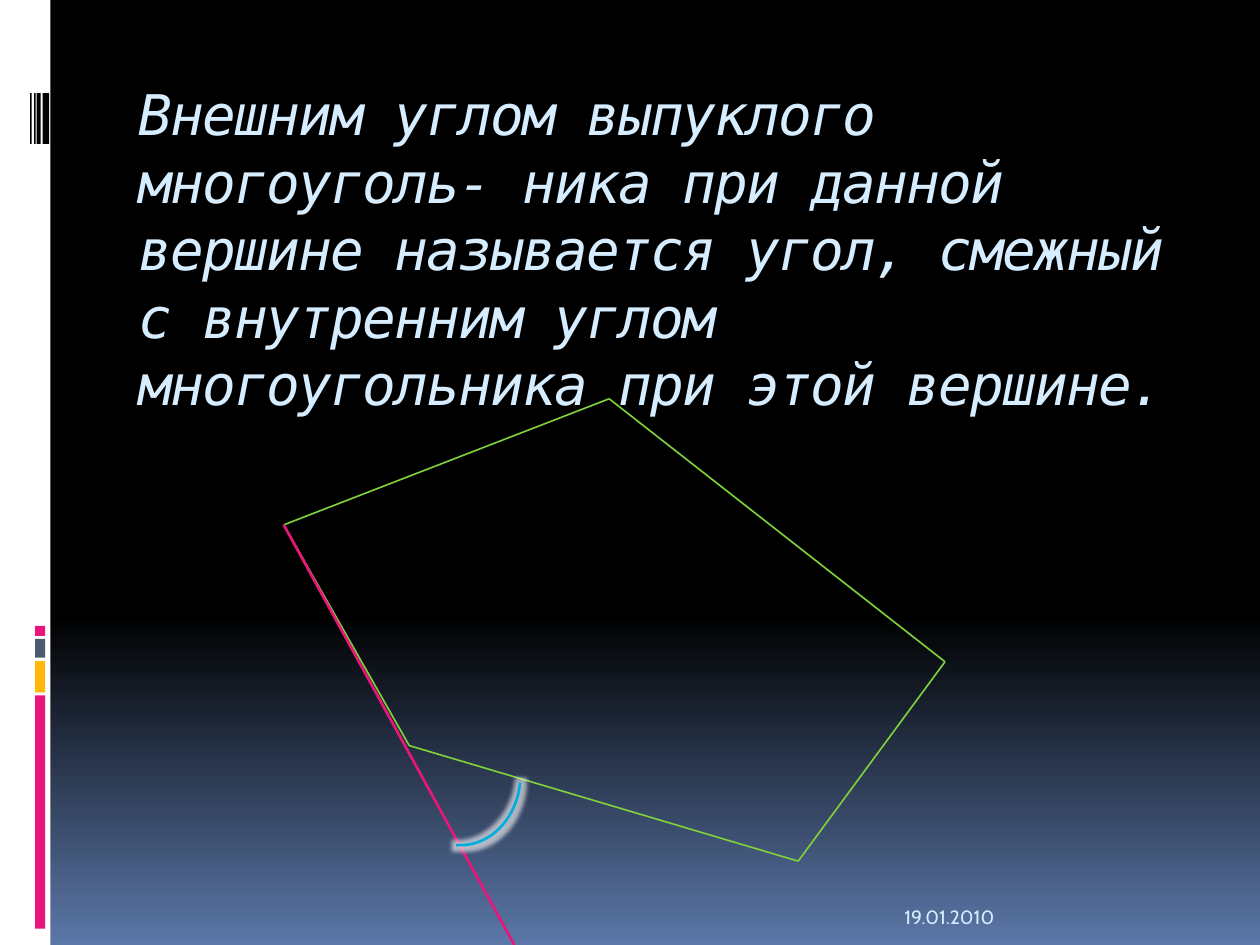
from lxml import etree
from pptx import Presentation
from pptx.dml.color import RGBColor
from pptx.enum import shapes, text
from pptx.oxml import ns
from pptx.util import Cm, Pt

COLORS = {
    "black": "000000", "white": "FFFFFF", "sky": "5B77A8", "pink": "EA157A",
    "amber": "FEB80A", "slate": "4E5B6F", "pale": "D6ECFF",
    "green": "7FD13B", "blue": "00ADDC",
}
A = ns.qn("a:effectLst")


def add_line(page, start, end, color, width):
    line = page.shapes.add_connector(
        shapes.MSO_CONNECTOR.STRAIGHT, *[Cm(v) for v in start + end])
    line.line.color.rgb = RGBColor.from_string(COLORS[color])
    line.line.width = Pt(width)
    etree.SubElement(line._element.spPr, A)


def add_text(page, place, content, font, size):
    box = page.shapes.add_textbox(*[Cm(v) for v in place])
    frame = box.text_frame
    frame.word_wrap = True
    frame.text = content
    span = frame.paragraphs[0].runs[0]
    span.font.name = font
    span.font.size = Pt(size)
    span.font.color.rgb = RGBColor.from_string(COLORS["pale"])
    return frame


deck = Presentation()
deck.slide_width, deck.slide_height = Cm(25.4), Cm(19.05)
page = deck.slides.add_slide(deck.slide_layouts[6])

fill = page.background.fill
fill.gradient()
fill.gradient_angle = 270
for stop, (position, color) in zip(fill.gradient_stops, [(0.65, "black"), (1, "sky")]):
    stop.position = position
    stop.color.rgb = RGBColor.from_string(COLORS[color])

bars = [(0, 0, 1.02, 19.05, "white")]
bars += [(0.71, top, 0.2, height, color) for top, height, color in [
    (14.02, 4.7, "pink"), (13.33, 0.63, "amber"),
    (12.88, 0.38, "slate"), (12.62, 0.2, "pink")]]
bars += [(left, 1.88, width, 1.02, "black") for left, width in [
    (0.86, 0.13), (0.74, 0.08), (0.69, 0.03), (0.61, 0.03)]]
for *place, color in bars:
    bar = page.shapes.add_shape(shapes.MSO_SHAPE.RECTANGLE, *[Cm(v) for v in place])
    bar.shadow.inherit = False
    bar.fill.solid()
    bar.fill.fore_color.rgb = RGBColor.from_string(COLORS[color])
    bar.line.fill.background()

title = add_text(
    page, (2.54, 1.42, 21.59, 6),
    "Внешним углом выпуклого многоуголь- ника при данной вершине называется "
    "угол, смежный с внутренним углом многоугольника при этой вершине.",
    "DejaVu Sans Mono", 32)
title.margin_top = Cm(0.18)
para = title.paragraphs[0]
para.line_spacing = Pt(38.6)
para.runs[0].font.italic = True
para.runs[0].font._element.set("spc", "-100")

date = add_text(page, (17.98, 17.83, 5.92, 1.02), "19.01.2010", "Cabin", 11)
date.vertical_anchor = text.MSO_ANCHOR.BOTTOM

vertices = [(5.72, 10.58), (12.28, 8.04), (19.05, 13.34), (16.09, 17.36), (8.25, 15.03)]
for start, end in zip(vertices, vertices[1:] + vertices[:1]):
    add_line(page, start, end, "green", 0.94)
add_line(page, vertices[0], (10.37, 19.05), "pink", 1.5)

arc = page.shapes.add_shape(shapes.MSO_SHAPE.ARC, Cm(7.95), Cm(14.5), Cm(2.74), Cm(2.34))
arc.rotation = 95.2
arc.fill.background()
arc.line.color.rgb = RGBColor.from_string(COLORS["blue"])
arc.line.width = Pt(1.5)
arc.shadow.inherit = False
glow = etree.SubElement(arc._element.spPr.find(A), ns.qn("a:glow"), rad=str(Pt(5)))
tint = etree.SubElement(glow, ns.qn("a:srgbClr"), val=COLORS["white"])
etree.SubElement(tint, ns.qn("a:alpha"), val="60000")

deck.save("out.pptx")
